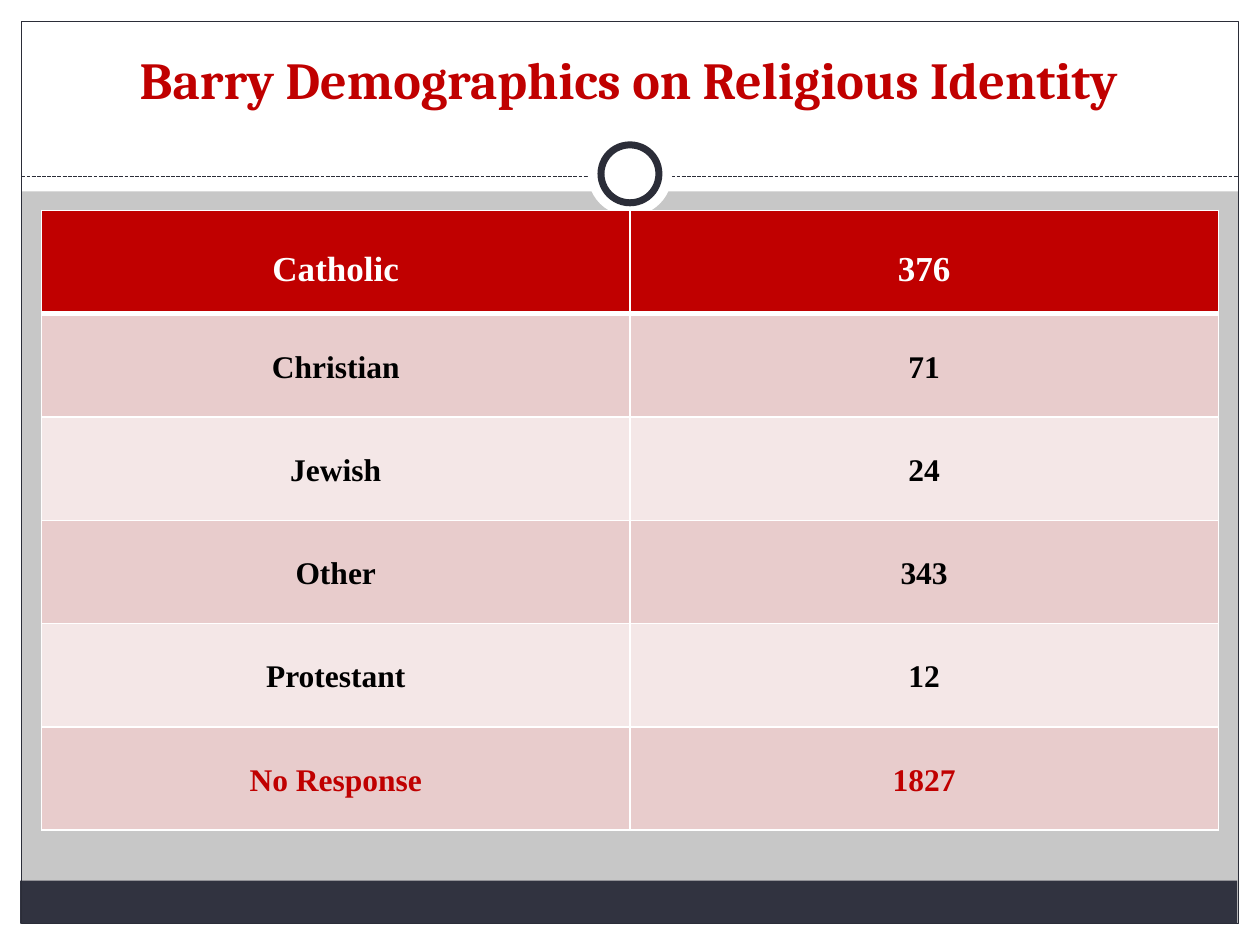
"""Build a slide with a table of religious identity counts."""
from dataclasses import dataclass

from lxml import etree
from pptx import Presentation
from pptx.dml.color import RGBColor
from pptx.enum.dml import MSO_LINE
from pptx.enum.shapes import MSO_CONNECTOR, MSO_SHAPE
from pptx.enum.text import MSO_ANCHOR, PP_ALIGN
from pptx.oxml.ns import qn
from pptx.util import Inches, Pt

RECTANGLE, OVAL = MSO_SHAPE.RECTANGLE, MSO_SHAPE.OVAL
STRAIGHT, DASHED = MSO_CONNECTOR.STRAIGHT, MSO_LINE.SQUARE_DOT
CENTER = PP_ALIGN.CENTER
TOP, BOTTOM = MSO_ANCHOR.TOP, MSO_ANCHOR.BOTTOM


@dataclass(frozen=True)
class Theme:
    background: str = "C7C7C7"
    white: str = "FFFFFF"
    black: str = "000000"
    red: str = "C00000"
    footer: str = "313340"
    outline: str = "2B2D38"
    bands: tuple = ("E8CCCC", "F4E7E7")
    title_font: str = "Cambria"
    table_font: str = "Times New Roman"
    title_size: float = 29.7
    header_size: float = 20
    body_size: float = 18
    line_spacing: float = 1.15


THEME = Theme()
WIDTH, HEIGHT, MARGIN = 10, 7.5, 0.17
TITLE = "Barry Demographics on Religious Identity"
TITLE_BOX = (0.33, 0.25, 9.33, 0.67)
ROWS = [
    ("Catholic", "376"),
    ("Christian", "71"),
    ("Jewish", "24"),
    ("Other", "343"),
    ("Protestant", "12"),
    ("No Response", "1827"),
]
TABLE_LEFT, TABLE_TOP = 0.33, 1.67
COLUMN_WIDTH, ROW_HEIGHT = 4.67, 0.82
RULE_TOP = 1.4
RING_CENTER = (5, 1.38)

PANELS = [
    ((0, HEIGHT - MARGIN, WIDTH, MARGIN), THEME.white, None),
    ((0, 0, WIDTH, 1.52), THEME.white, None),
    ((0, 0, MARGIN, HEIGHT), THEME.white, None),
    ((WIDTH - MARGIN, 0, MARGIN, HEIGHT), THEME.white, None),
    ((0.16, 6.99, 9.66, 0.34), THEME.footer, None),
    ((MARGIN, MARGIN, WIDTH - 2 * MARGIN, HEIGHT - 2 * MARGIN), None, 0.75),
]
RINGS = [(0.67, None), (0.46, 4)]


def color(value):
    return RGBColor.from_string(value)


def add_panel(slide, kind, box, fill, line_width):
    shape = slide.shapes.add_shape(kind, *map(Inches, box))
    shape.shadow.inherit = False
    if fill:
        shape.fill.solid()
        shape.fill.fore_color.rgb = color(fill)
    else:
        shape.fill.background()
    if line_width:
        shape.line.color.rgb = color(THEME.outline)
        shape.line.width = Pt(line_width)
    else:
        shape.line.fill.background()


def add_rule(slide):
    rule = slide.shapes.add_connector(
        STRAIGHT, Inches(MARGIN), Inches(RULE_TOP), Inches(WIDTH - MARGIN), Inches(RULE_TOP))
    rule.line.color.rgb = color(THEME.outline)
    rule.line.width = Pt(0.75)
    rule.line.dash_style = DASHED
    etree.SubElement(rule._element.spPr, qn("a:effectLst"))


def add_run(paragraph, text, font, size, text_color):
    paragraph.alignment = CENTER
    run = paragraph.add_run()
    run.text = text
    run.font.name = font
    run.font.size = Pt(size)
    run.font.bold = True
    run.font.color.rgb = color(text_color)


def set_title(slide):
    title = slide.shapes.title
    title.left, title.top, title.width, title.height = map(Inches, TITLE_BOX)
    title.text_frame.vertical_anchor = BOTTOM
    title.text_frame.word_wrap = True
    add_run(title.text_frame.paragraphs[0], TITLE,
            THEME.title_font, THEME.title_size, THEME.red)
    slide.shapes._spTree.append(title._element)


def set_borders(cell, bottom_width, top_width):
    properties = cell._tc.get_or_add_tcPr()
    widths = {"a:lnL": 1, "a:lnR": 1, "a:lnT": top_width, "a:lnB": bottom_width}
    for position, (tag, width) in enumerate(widths.items()):
        line = etree.Element(qn(tag), w=str(Pt(width)))
        fill = etree.SubElement(line, qn("a:solidFill"))
        etree.SubElement(fill, qn("a:srgbClr"), val=THEME.white)
        properties.insert(position, line)


def row_style(index):
    if index == 0:
        return THEME.red, THEME.white, THEME.header_size
    text_color = THEME.red if index == len(ROWS) - 1 else THEME.black
    return THEME.bands[(index - 1) % 2], text_color, THEME.body_size


def add_counts_table(slide):
    columns = len(ROWS[0])
    table = slide.shapes.add_table(
        len(ROWS), columns, Inches(TABLE_LEFT), Inches(TABLE_TOP),
        Inches(COLUMN_WIDTH * columns), Inches(ROW_HEIGHT * len(ROWS))).table
    for column in table.columns:
        column.width = Inches(COLUMN_WIDTH)
    for index, values in enumerate(ROWS):
        table.rows[index].height = Inches(ROW_HEIGHT)
        fill, text_color, size = row_style(index)
        for position, value in enumerate(values):
            cell = table.cell(index, position)
            cell.fill.solid()
            cell.fill.fore_color.rgb = color(fill)
            cell.margin_left = cell.margin_right = Inches(0.07)
            cell.margin_top = Pt(size * THEME.line_spacing)
            cell.margin_bottom = 0
            cell.vertical_anchor = TOP
            add_run(cell.text_frame.paragraphs[0], value,
                    THEME.table_font, size, text_color)
            set_borders(cell, 3 if index == 0 else 1, 3 if index == 1 else 1)


def main():
    presentation = Presentation()
    presentation.slide_width, presentation.slide_height = Inches(WIDTH), Inches(HEIGHT)
    slide = presentation.slides.add_slide(presentation.slide_layouts[5])
    slide.background.fill.solid()
    slide.background.fill.fore_color.rgb = color(THEME.background)
    for box, fill, line_width in PANELS:
        add_panel(slide, RECTANGLE, box, fill, line_width)
    add_rule(slide)
    for diameter, line_width in RINGS:
        left, top = (center - diameter / 2 for center in RING_CENTER)
        add_panel(slide, OVAL, (left, top, diameter, diameter), THEME.white, line_width)
    set_title(slide)
    add_counts_table(slide)
    presentation.save("out.pptx")


if __name__ == "__main__":
    main()
